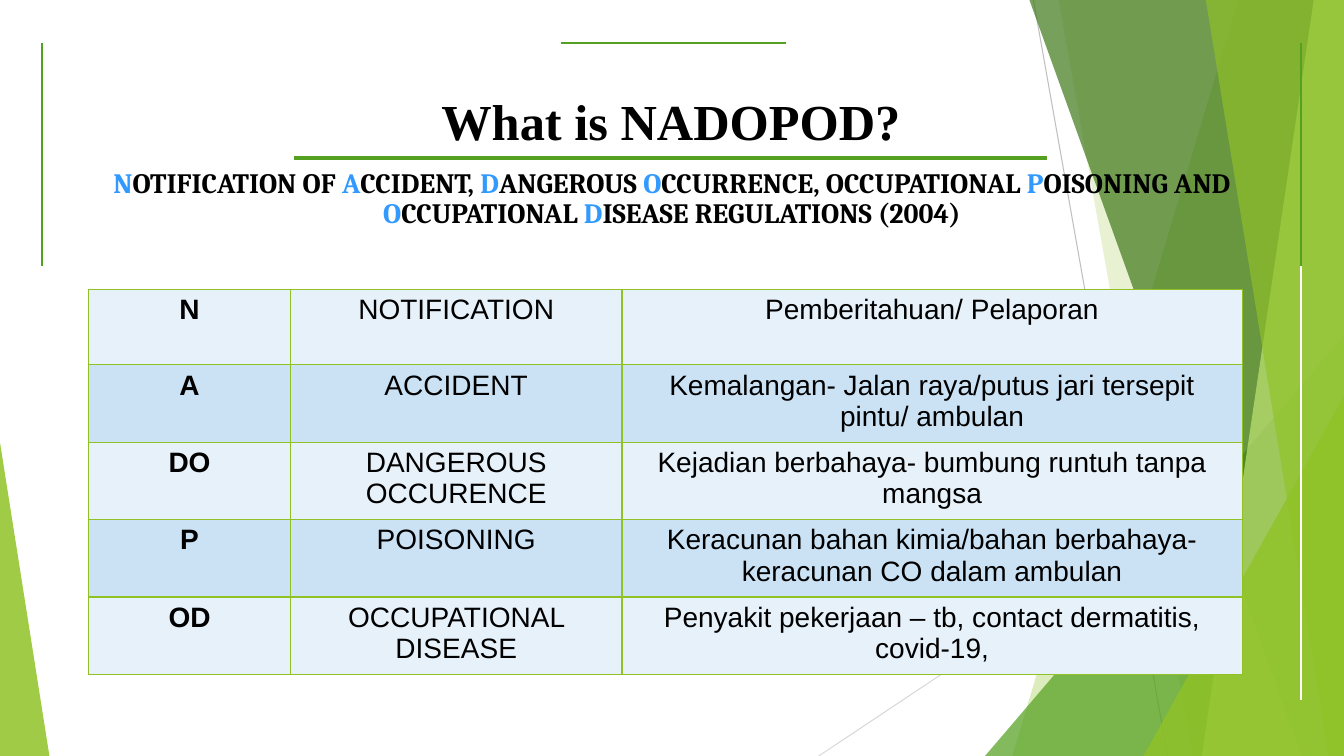
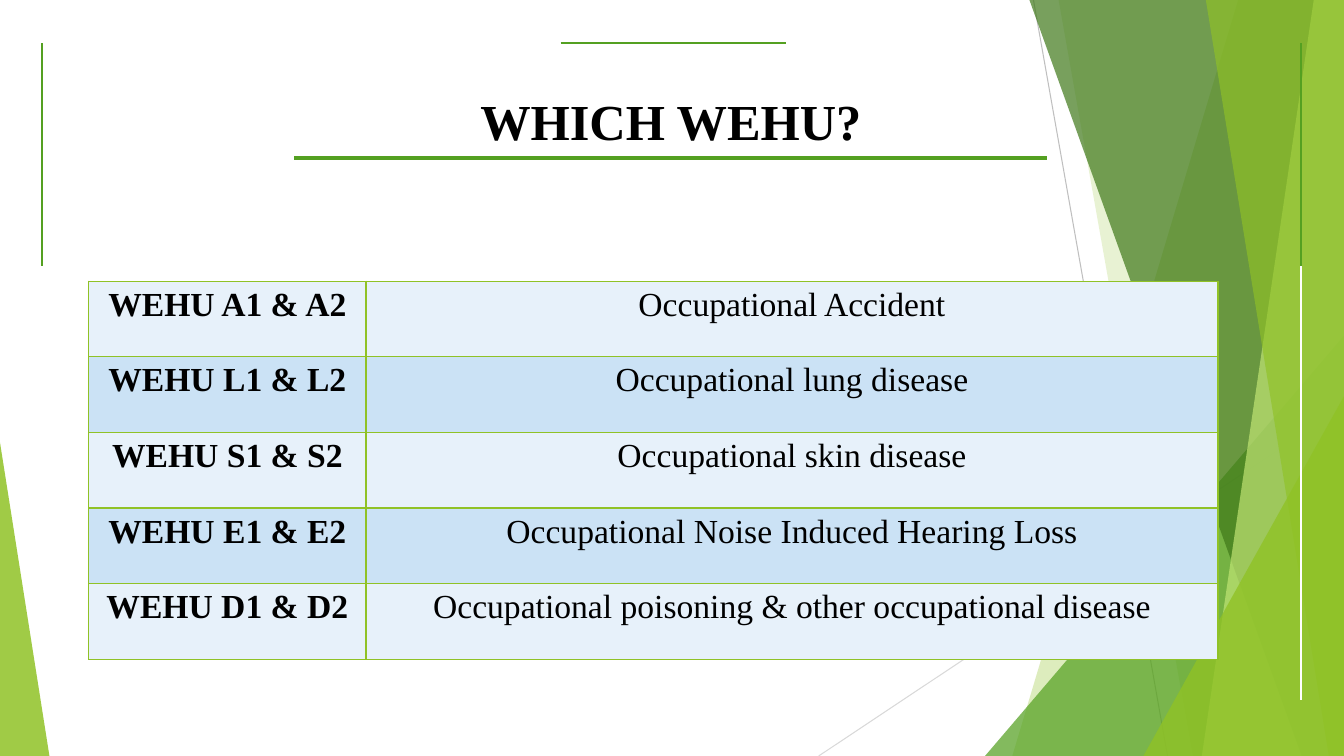
from lxml import etree
from pptx import Presentation
from pptx.dml.color import RGBColor
from pptx.enum.shapes import MSO_CONNECTOR, MSO_SHAPE
from pptx.enum.text import MSO_ANCHOR, MSO_AUTO_SIZE, PP_ALIGN
from pptx.oxml.ns import qn
from pptx.util import Inches, Pt

STRAIGHT = MSO_CONNECTOR.STRAIGHT
TRIANGLE = MSO_SHAPE.ISOSCELES_TRIANGLE
CENTER = PP_ALIGN.CENTER
BOTTOM = MSO_ANCHOR.BOTTOM
NO_AUTOFIT = MSO_AUTO_SIZE.NONE

WIDTH, HEIGHT = 13.33, 7.5
TITLE_ONLY = 5
SERIF, SANS, SUBTITLE_FONT = "Times New Roman", "Arial", "Cambria"
COLORS = {
    "lime": "90C226",
    "green": "54A021",
    "dark": "3F7819",
    "pale": "C0E474",
    "rule": "BFBFBF",
    "light_rule": "D9D9D9",
    "white": "FFFFFF",
    "black": "000000",
    "initial": "3299FF",
    "row_odd": "E7F1FA",
    "row_even": "CBE2F5",
}

SUBTITLE = [
    ("N", "OTIFICATION OF "), ("A", "CCIDENT, "), ("D", "ANGEROUS "),
    ("O", "CCURRENCE, OCCUPATIONAL "), ("P", "OISONING AND "),
    ("O", "CCUPATIONAL "), ("D", "ISEASE REGULATIONS (2004)"),
]
NADOPOD_ROWS = [
    ("N", "NOTIFICATION", "Pemberitahuan/ Pelaporan"),
    ("A", "ACCIDENT", "Kemalangan- Jalan raya/putus jari tersepit pintu/ ambulan"),
    ("DO", "DANGEROUS OCCURENCE", "Kejadian berbahaya- bumbung runtuh tanpa mangsa"),
    ("P", "POISONING", "Keracunan bahan kimia/bahan berbahaya- keracunan CO dalam ambulan"),
    ("OD", "OCCUPATIONAL DISEASE", "Penyakit pekerjaan – tb, contact dermatitis, covid-19,"),
]
WEHU_ROWS = [
    ("WEHU A1 & A2", "Occupational Accident"),
    ("WEHU L1 & L2", "Occupational lung disease"),
    ("WEHU S1 & S2", "Occupational skin disease"),
    ("WEHU E1 & E2", "Occupational Noise Induced Hearing Loss"),
    ("WEHU D1 & D2", "Occupational poisoning & other occupational disease"),
]


def rgb(name):
    """Return the named colour."""
    return RGBColor.from_string(COLORS[name])


def style_font(font, name, size, color="black", bold=False):
    """Set face, size, colour and weight of a font."""
    font.name, font.size, font.bold = name, Pt(size), bold
    font.color.rgb = rgb(color)


def add_line(s, start, end, color, width):
    """Draw a straight line without a shadow."""
    line = s.shapes.add_connector(STRAIGHT, *map(Inches, start + end))
    line.line.color.rgb = rgb(color)
    line.line.width = Pt(width)
    etree.SubElement(line._element.spPr, qn("a:effectLst"))


def style_facet(sp, color, opacity):
    """Give a shape a translucent fill and no outline."""
    sp.shadow.inherit = False
    sp.line.fill.background()
    sp.fill.solid()
    sp.fill.fore_color.rgb = rgb(color)
    fill = sp._element.spPr.find(qn("a:solidFill"))
    alpha = etree.SubElement(fill[0], qn("a:alpha"))
    alpha.set("val", str(opacity * 1000))


def add_band(s, top_left, bottom_left, color, opacity):
    """Draw a slanted band reaching to the right edge of the slide."""
    outline = [(WIDTH, 0), (WIDTH, HEIGHT), (bottom_left, HEIGHT)]
    builder = s.shapes.build_freeform(Inches(top_left), 0)
    builder.add_line_segments([(Inches(x), Inches(y)) for x, y in outline])
    style_facet(builder.convert_to_shape(), color, opacity)


def add_corner(s, left, top, width, apex, color, opacity):
    """Draw a right triangle standing on the bottom edge."""
    box = map(Inches, (left, top, width, HEIGHT - top))
    sp = s.shapes.add_shape(TRIANGLE, *box)
    sp.adjustments[0] = apex
    style_facet(sp, color, opacity)


def add_facets(s):
    """Draw the green facets behind the content."""
    add_line(s, (10.25, 0), (11.58, HEIGHT), "rule", 0.75)
    add_line(s, (WIDTH, 4.03), (8.12, HEIGHT), "light_rule", 0.75)
    add_band(s, 12.28, 10.04, "lime", 30)
    add_band(s, 10.5, 11.83, "lime", 20)
    add_corner(s, 9.77, 3.33, 3.56, 1, "green", 72)
    add_band(s, 10.21, 12.91, "dark", 70)
    add_band(s, 13.03, 11.92, "pale", 70)
    add_band(s, 11.96, 13.18, "lime", 65)
    add_corner(s, 11.34, 3.93, 1.99, 1, "lime", 80)
    add_corner(s, 0, 4.39, 0.49, 0, "lime", 85)


def add_frame(s, left=0.42, top=0.43, right=12.9, middle=2.64, bottom=6.94):
    """Draw the frame lines and the rule under the title."""
    for x in (left, right):
        add_line(s, (x, top), (x, middle), "green", 1.5)
    add_line(s, (5.56, top), (7.8, top), "green", 1.5)
    add_line(s, (right, middle), (right, bottom), "white", 1.5)
    add_line(s, (2.92, 1.57), (10.38, 1.57), "green", 2.5)


def set_title(s, text, box=(0.88, 0.32, 11.55, 1.23)):
    """Place and format the title placeholder."""
    title = s.shapes.title
    title.left, title.top, title.width, title.height = map(Inches, box)
    tf = title.text_frame
    tf.text = text
    tf.auto_size, tf.vertical_anchor = NO_AUTOFIT, BOTTOM
    p = tf.paragraphs[0]
    p.alignment, p.line_spacing = CENTER, 0.9
    style_font(p.runs[0].font, SERIF, 36, bold=True)


def add_subtitle(s, words, box):
    """Write the full name with its initials picked out in blue."""
    tf = s.shapes.add_textbox(*map(Inches, box)).text_frame
    tf.word_wrap = True
    p = tf.paragraphs[0]
    p.alignment, p.line_spacing = CENTER, 0.9
    for word in words:
        for text, color in zip(word, ("initial", "black")):
            r = p.add_run()
            r.text = text
            style_font(r.font, SUBTITLE_FONT, 20, color, True)


def add_borders(cell, color="lime", width=1):
    """Outline all four sides of a table cell."""
    props = cell._tc.get_or_add_tcPr()
    for i, side in enumerate(("lnL", "lnR", "lnT", "lnB")):
        border = etree.Element(qn(f"a:{side}"), w=str(Pt(width)))
        fill = etree.SubElement(border, qn("a:solidFill"))
        etree.SubElement(fill, qn("a:srgbClr"), val=COLORS[color])
        props.insert(i, border)


def add_grid(s, rows, left, top, widths, font, size, row_height=0.75):
    """Add a table with alternating rows and a bold first column."""
    box = (left, top, sum(widths), row_height * len(rows))
    frame = s.shapes.add_table(len(rows), len(widths), *map(Inches, box))
    table = frame.table
    table.first_row = table.horz_banding = False
    for column, width in zip(table.columns, widths):
        column.width = Inches(width)
    for i, row in enumerate(rows):
        table.rows[i].height = Inches(row_height)
        for j, text in enumerate(row):
            cell = table.cell(i, j)
            cell.text = text
            cell.fill.solid()
            cell.fill.fore_color.rgb = rgb("row_even" if i % 2 else "row_odd")
            add_borders(cell)
            p = cell.text_frame.paragraphs[0]
            p.alignment = CENTER
            style_font(p.runs[0].font, font, size, bold=j == 0)


def add_base_slide(prs, title):
    """Add a slide with the shared facets, frame and title."""
    s = prs.slides.add_slide(prs.slide_layouts[TITLE_ONLY])
    add_facets(s)
    set_title(s, title)
    add_frame(s)
    return s


def add_nadopod_slide(prs):
    """Explain the abbreviation letter by letter."""
    s = add_base_slide(prs, "What is NADOPOD?")
    add_subtitle(s, SUBTITLE, (0.63, 1.63, 12.07, 1.23))
    add_grid(s, NADOPOD_ROWS, 0.88, 2.87, (2, 3.29, 6.15), SANS, 20)


def add_wehu_slide(prs):
    """Match each form to the case it reports."""
    s = add_base_slide(prs, "WHICH WEHU?")
    add_grid(s, WEHU_ROWS, 0.88, 2.79, (2.75, 8.45), SERIF, 24)


def main():
    """Build and save the presentation."""
    prs = Presentation()
    prs.slide_width, prs.slide_height = Inches(WIDTH), Inches(HEIGHT)
    add_nadopod_slide(prs)
    add_wehu_slide(prs)
    prs.save("out.pptx")


if __name__ == "__main__":
    main()
